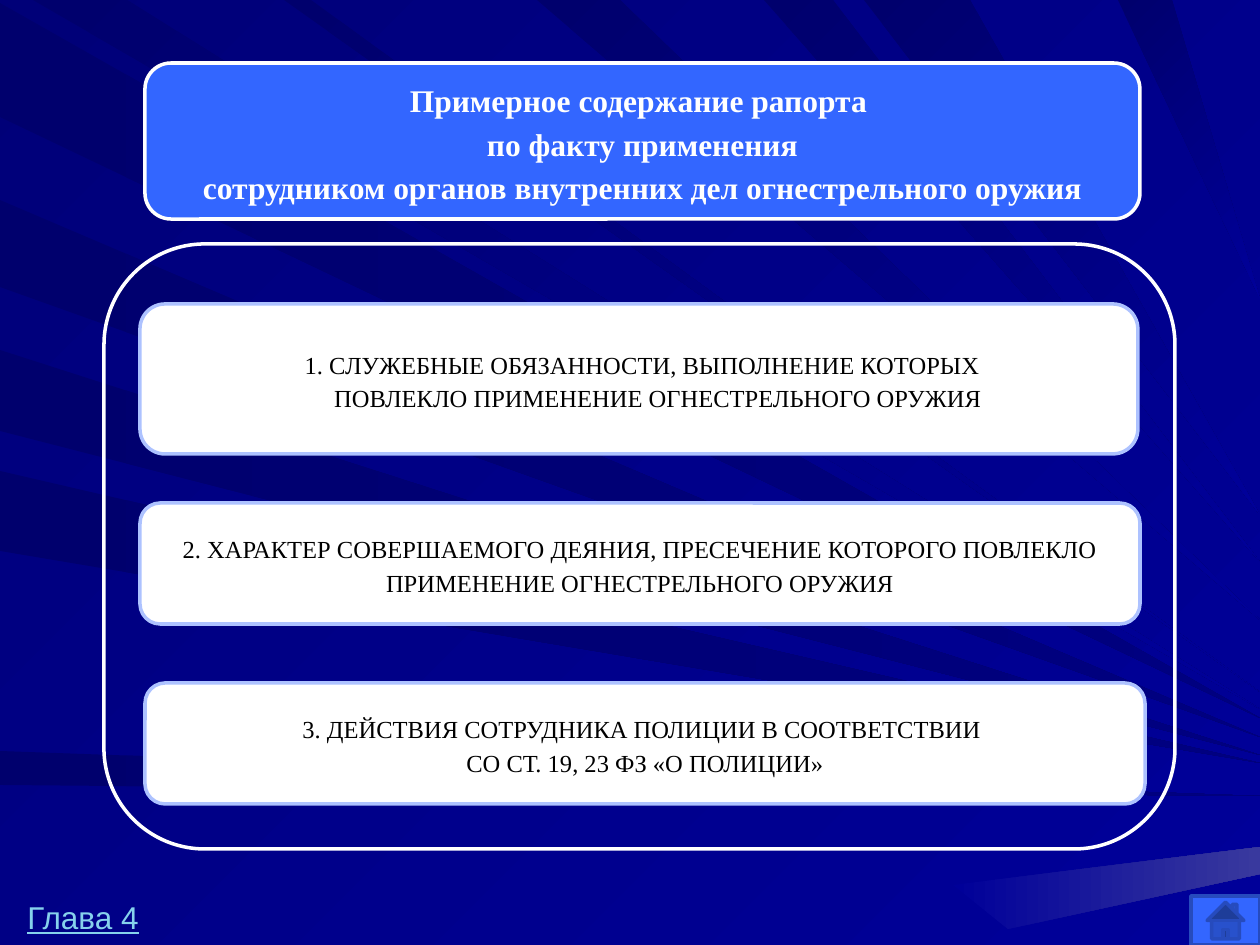
from dataclasses import dataclass

from pptx import Presentation
from pptx.dml.color import RGBColor
from pptx.enum.shapes import MSO_SHAPE as Preset
from pptx.enum.text import MSO_ANCHOR as Anchor, MSO_AUTO_SIZE as AutoSize, PP_ALIGN as Align
from pptx.util import Emu, Pt

EMU_PER_PX = 914400 / 126
WIDTH, HEIGHT = 1260, 945


@dataclass(frozen=True)
class Theme:
    heading_font: str = "Times New Roman"
    link_font: str = "Arial"
    heading_size: int = 18
    item_size: int = 14
    outline: int = 2
    line_spacing: float = 1.15
    backdrop: str = "000078"
    ray: str = "00006D"
    navy: str = "000080"
    blue: str = "000099"
    glow: str = "39399E"
    accent: str = "3366FF"
    accent_edge: str = "264BBD"
    item_edge: str = "ADC2FF"
    white: str = "FFFFFF"
    black: str = "000000"
    link: str = "86D1EC"


THEME = Theme()

# Each ray spans two places on its starting edge and ends at a height on the right edge
LEFT_RAYS = [(3, 117, 718), (200, 287, 737), (350, 431, 755), (471, 551, 763), (751, 785, 796)]
TOP_RAYS = [(33, 127, 709), (284, 311, 692), (537, 620, 620), (764, 833, 562),
            (864, 970, 515), (1118, 1172, 299)]
GLOW = [(953, 885), (WIDTH, 847), (WIDTH, 874), (1008, 929)]

HEADING = [
    "Примерное содержание рапорта ",
    "по факту применения",
    "сотрудником органов внутренних дел огнестрельного оружия",
]
# Report items: bounds, paragraphs, (left margin, first-line indent) of each paragraph
ITEMS = [
    ((140, 304, 998, 150),
     ["1. СЛУЖЕБНЫЕ ОБЯЗАННОСТИ, ВЫПОЛНЕНИЕ КОТОРЫХ ",
      "ПОВЛЕКЛО ПРИМЕНЕНИЕ ОГНЕСТРЕЛЬНОГО ОРУЖИЯ"],
     [(38, -25), (38, 0)]),
    ((140, 503, 1000, 121),
     ["2. ХАРАКТЕР СОВЕРШАЕМОГО ДЕЯНИЯ, ПРЕСЕЧЕНИЕ КОТОРОГО ПОВЛЕКЛО "
      "ПРИМЕНЕНИЕ ОГНЕСТРЕЛЬНОГО ОРУЖИЯ"],
     []),
    ((145, 683, 1000, 121),
     ["3. ДЕЙСТВИЯ СОТРУДНИКА ПОЛИЦИИ В СООТВЕТСТВИИ ",
      "СО СТ. 19, 23 ФЗ «О ПОЛИЦИИ»"],
     []),
]


def px(length):
    return Emu(round(length * EMU_PER_PX))


def rgb(colour):
    return RGBColor.from_string(colour)


def paint_gradient(fill, first, last, angle):
    """Fill with a linear gradient whose angle runs clockwise."""
    fill.gradient()
    fill.gradient_angle = -angle % 360
    for stop, colour in zip(fill.gradient_stops, (first, last)):
        stop.color.rgb = rgb(colour)


def add_ray(slide, corners, first, last, angle):
    outline = slide.shapes.build_freeform(*corners[0], scale=EMU_PER_PX)
    outline.add_line_segments(corners[1:], close=True)
    ray = outline.convert_to_shape()
    ray.shadow.inherit = False
    ray.line.fill.background()
    paint_gradient(ray.fill, first, last, angle)


def add_backdrop(slide):
    paint_gradient(slide.background.fill, THEME.backdrop, THEME.blue, 45)
    for upper, lower, tip in LEFT_RAYS:
        add_ray(slide, [(0, upper), (0, lower), (WIDTH, tip)], THEME.ray, THEME.navy, 0)
    for left, right, tip in TOP_RAYS:
        add_ray(slide, [(left, 0), (right, 0), (WIDTH, tip)], THEME.ray, THEME.blue, 45)
    add_ray(slide, GLOW, THEME.blue, THEME.glow, 0)


def add_panel(slide, preset, bounds, fill, edge):
    panel = slide.shapes.add_shape(preset, *map(px, bounds))
    panel.shadow.inherit = False
    if fill:
        panel.fill.solid()
        panel.fill.fore_color.rgb = rgb(fill)
    else:
        panel.fill.background()
    panel.line.color.rgb = rgb(edge)
    panel.line.width = Pt(THEME.outline)
    return panel


def add_run(paragraph, text, font, size, colour):
    run = paragraph.add_run()
    run.text = text
    run.font.name = font
    run.font.size = Pt(size)
    run.font.color.rgb = rgb(colour)
    return run


def write_centred(panel, lines, size, colour, bold=False, indents=()):
    frame = panel.text_frame
    frame.word_wrap = True
    frame.vertical_anchor = Anchor.MIDDLE
    for number, line in enumerate(lines):
        paragraph = frame.add_paragraph() if number else frame.paragraphs[0]
        paragraph.alignment = Align.CENTER
        paragraph.line_spacing = THEME.line_spacing
        if indents:
            margin, first_line = indents[number]
            properties = paragraph._p.get_or_add_pPr()
            properties.set("marL", str(px(margin)))
            properties.set("indent", str(px(first_line)))
        add_run(paragraph, line, THEME.heading_font, size, colour).font.bold = bold


def add_chapter_label(slide, text, bounds):
    frame = slide.shapes.add_textbox(*map(px, bounds)).text_frame
    frame.word_wrap = False
    frame.auto_size = AutoSize.SHAPE_TO_FIT_TEXT
    label = add_run(frame.paragraphs[0], text, THEME.link_font, THEME.heading_size, THEME.link)
    label.font.underline = True


def main():
    deck = Presentation()
    deck.slide_width, deck.slide_height = px(WIDTH), px(HEIGHT)
    slide = deck.slides.add_slide(deck.slide_layouts[6])

    add_backdrop(slide)
    add_panel(slide, Preset.ACTION_BUTTON_HOME, (1191, 896, 69, 49),
              THEME.accent, THEME.accent_edge)
    heading = add_panel(slide, Preset.ROUNDED_RECTANGLE, (145, 63, 995, 156),
                        THEME.accent, THEME.white)
    write_centred(heading, HEADING, THEME.heading_size, THEME.white, bold=True)

    add_panel(slide, Preset.ROUNDED_RECTANGLE, (104, 244, 1071, 605), None, THEME.white)
    for bounds, lines, indents in ITEMS:
        item = add_panel(slide, Preset.ROUNDED_RECTANGLE, bounds, THEME.white, THEME.item_edge)
        write_centred(item, lines, THEME.item_size, THEME.black, indents=indents)

    add_chapter_label(slide, "Глава 4", (15, 892, 137, 50))
    deck.save("out.pptx")


if __name__ == "__main__":
    main()
